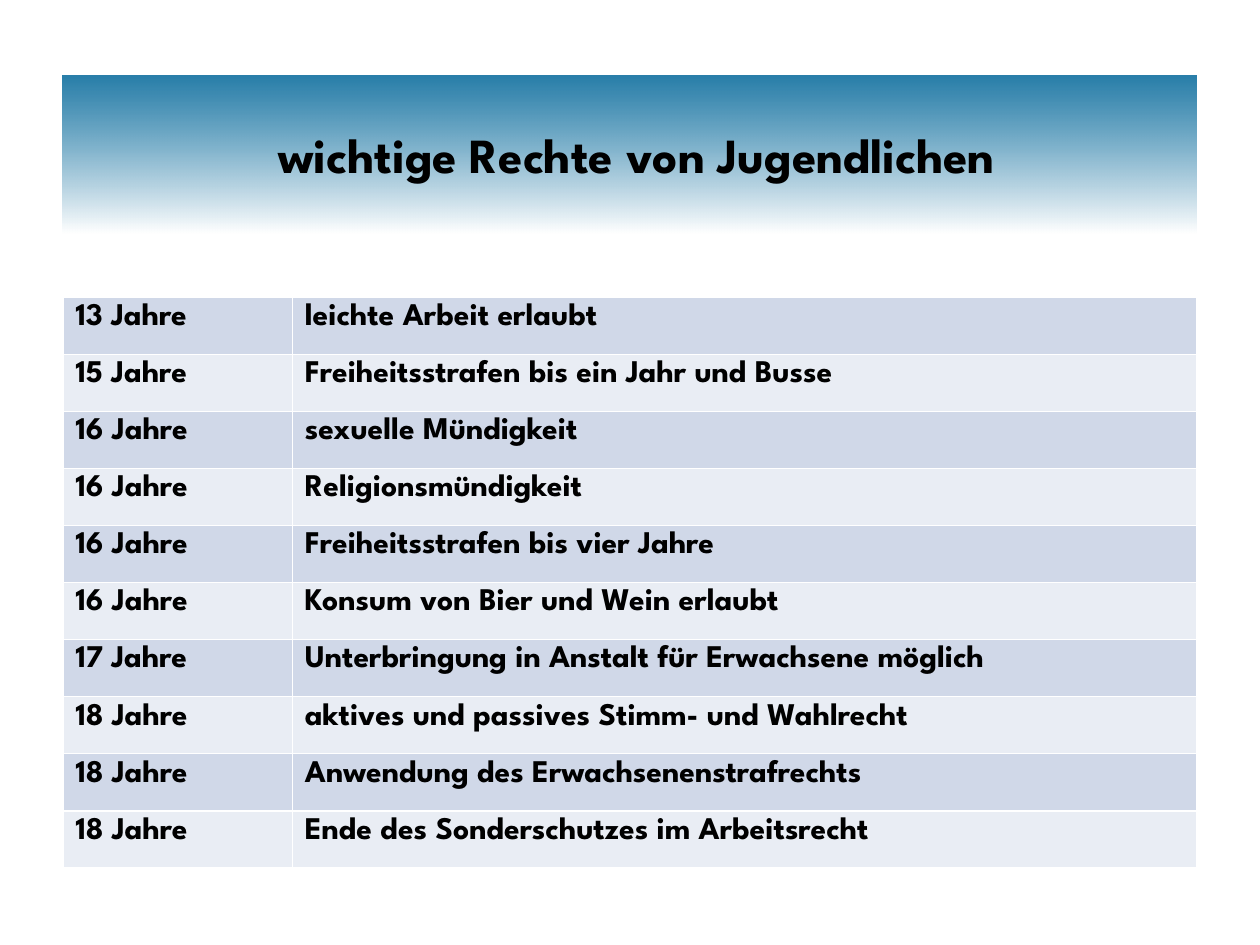
from lxml import etree
from pptx import Presentation
from pptx.dml.color import RGBColor
from pptx.enum.shapes import MSO_SHAPE
from pptx.enum.text import MSO_ANCHOR, PP_ALIGN
from pptx.oxml.ns import qn
from pptx.util import Inches, Pt

RECTANGLE = MSO_SHAPE.RECTANGLE
MIDDLE = MSO_ANCHOR.MIDDLE
CENTER = PP_ALIGN.CENTER

# Slide grid
WIDTH, HEIGHT = Inches(10), Inches(7.5)
COLUMNS, ROWS = 200, 150

TITLE = " wichtige Rechte von Jugendlichen"
RIGHTS = [
    ("13 Jahre", "leichte Arbeit erlaubt"),
    ("15 Jahre", "Freiheitsstrafen bis ein Jahr und Busse"),
    ("16 Jahre", "sexuelle Mündigkeit"),
    ("16 Jahre", "Religionsmündigkeit"),
    ("16 Jahre", "Freiheitsstrafen bis vier Jahre"),
    ("16 Jahre", "Konsum von Bier und Wein erlaubt"),
    ("17 Jahre", "Unterbringung in Anstalt für Erwachsene möglich"),
    ("18 Jahre", "aktives und passives Stimm- und Wahlrecht"),
    ("18 Jahre", "Anwendung des Erwachsenenstrafrechts"),
    ("18 Jahre", "Ende des Sonderschutzes im Arbeitsrecht"),
]


def color(value):
    return RGBColor.from_string(value)


def across(columns):
    return round(WIDTH * columns / COLUMNS)


def down(rows):
    return round(HEIGHT * rows / ROWS)


class SlideBuilder:
    font_name = "League Spartan"
    text_color = "000000"
    bands = ("D0D8E8", "E9EDF4")
    border_color = "FFFFFF"

    def __init__(self, slide):
        self.slide = slide

    def add_run(self, paragraph, text, size):
        run = paragraph.add_run()
        run.text = text
        run.font.name = self.font_name
        run.font.size = Pt(size)
        run.font.bold = True
        run.font.color.rgb = color(self.text_color)

    def add_banner(self, text, left, top, width, height):
        shape = self.slide.shapes.add_shape(
            RECTANGLE, across(left), down(top), across(width), down(height))
        shape.shadow.inherit = False
        shape.line.fill.background()

        # Translucent blue fading downwards to white
        shape.fill.gradient()
        shape.fill.gradient_angle = 270
        first, last = shape.fill.gradient_stops
        first.color.rgb, first.position = color("006699"), 0
        last.color.rgb, last.position = color("FFFFFF"), 1
        blue = next(shape.element.spPr.iter(qn("a:srgbClr")))
        etree.SubElement(blue, qn("a:alpha"), val="84000")

        shape.text_frame.word_wrap = True
        shape.text_frame.vertical_anchor = MIDDLE
        paragraph = shape.text_frame.paragraphs[0]
        paragraph.alignment = CENTER
        self.add_run(paragraph, text, 28)

    def add_borders(self, cell):
        properties = cell._tc.get_or_add_tcPr()
        for index, side in enumerate(("lnL", "lnR", "lnT", "lnB")):
            line = etree.Element(qn(f"a:{side}"), w=str(Pt(1)))
            fill = etree.SubElement(line, qn("a:solidFill"))
            etree.SubElement(fill, qn("a:srgbClr"), val=self.border_color)
            properties.insert(index, line)

    def add_table(self, records, left, top, column_widths, row_height):
        table = self.slide.shapes.add_table(
            len(records), len(column_widths), across(left), down(top),
            across(sum(column_widths)), down(row_height * len(records))).table
        table.first_row = False
        table.horz_banding = False
        for column, width in zip(table.columns, column_widths):
            column.width = across(width)

        for index, record in enumerate(records):
            table.rows[index].height = down(row_height)
            for cell, text in zip(table.rows[index].cells, record):
                cell.fill.solid()
                cell.fill.fore_color.rgb = color(self.bands[index % 2])
                self.add_borders(cell)
                self.add_run(cell.text_frame.paragraphs[0], text, 18)


def main():
    presentation = Presentation()
    presentation.slide_width, presentation.slide_height = WIDTH, HEIGHT
    blank_layout = presentation.slide_layouts[6]
    builder = SlideBuilder(presentation.slides.add_slide(blank_layout))

    # Title banner
    builder.add_banner(TITLE, left=10, top=12, width=180, height=25)

    # Rights by age
    builder.add_table(RIGHTS, left=10, top=47.2,
                      column_widths=(36.4, 143.6), row_height=9.06)

    presentation.save("out.pptx")


if __name__ == "__main__":
    main()
